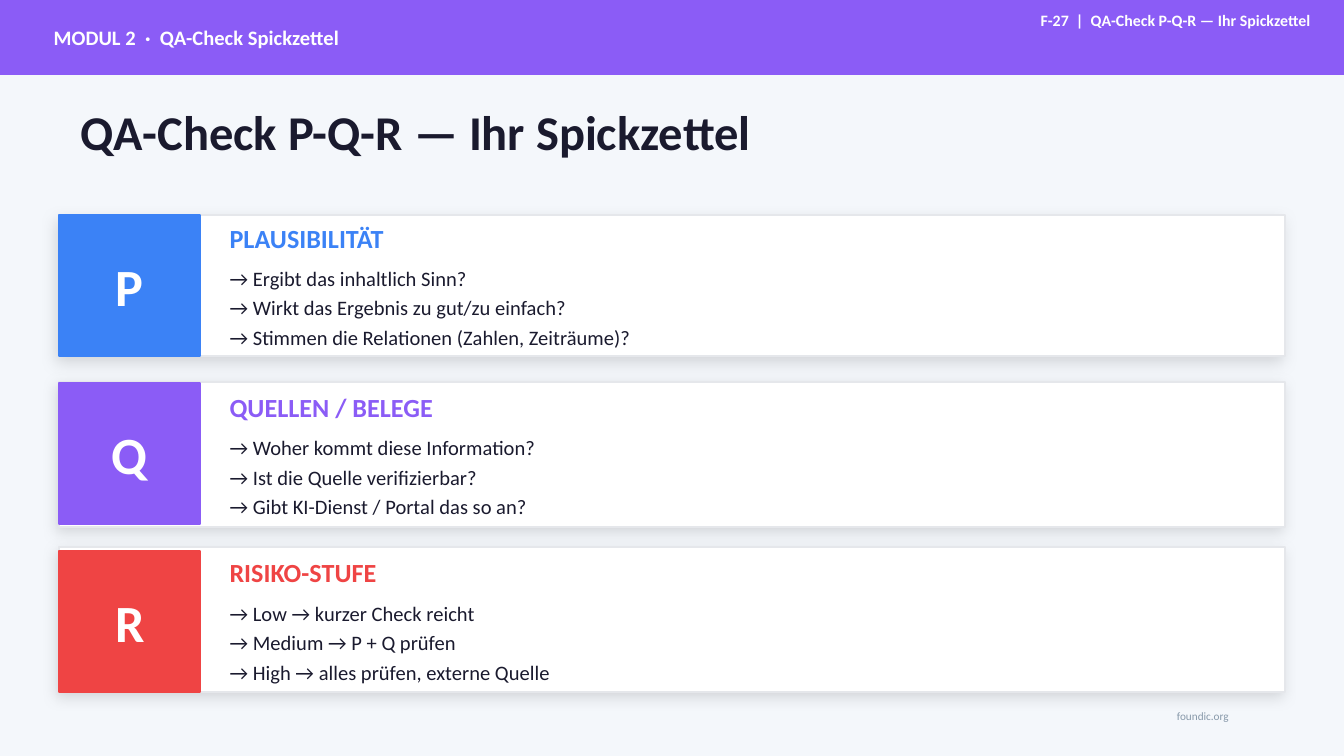
from dataclasses import dataclass
from lxml.etree import SubElement
from pptx import Presentation
from pptx.dml.color import RGBColor
from pptx.enum.shapes import MSO_SHAPE
from pptx.enum.text import MSO_ANCHOR, PP_ALIGN
from pptx.oxml.ns import qn
from pptx.util import Pt


@dataclass(frozen=True)
class Theme:
    font: str = "Calibri"
    back: str = "F4F7FB"
    white: str = "FFFFFF"
    edge: str = "E5E7EB"
    ink: str = "1A1A2E"
    mute: str = "8899AA"
    blue: str = "3B82F6"
    violet: str = "8B5CF6"
    red: str = "EF4444"
    title: float = 26
    letter: float = 28
    head: float = 14
    body: float = 11
    tag: float = 8.5
    foot: float = 6


T = Theme()
WIDE, HIGH = 720, 405
LEFT, TILE = 31.68, 75.6
TEXT = 115.92
STEP = 15.84

# Letter, colour, card top, card height, heading top, heading, questions
ROWS = [
    ("P", T.blue, 115.2, 75.6, 113.76, "PLAUSIBILITÄT",
     ["Ergibt das inhaltlich Sinn?",
      "Wirkt das Ergebnis zu gut/zu einfach?",
      "Stimmen die Relationen (Zahlen, Zeiträume)?"]),
    ("Q", T.violet, 204.48, 77.76, 204.48, "QUELLEN / BELEGE",
     ["Woher kommt diese Information?",
      "Ist die Quelle verifizierbar?",
      "Gibt KI-Dienst / Portal das so an?"]),
    ("R", T.red, 293.04, 77.76, 293.04, "RISIKO-STUFE",
     ["Low → kurzer Check reicht",
      "Medium → P + Q prüfen",
      "High → alles prüfen, externe Quelle"]),
]


def rgb(code):
    return RGBColor.from_string(code)


def add_rect(slide, x, y, w, h, fill, line=None):
    rect = slide.shapes.add_shape(MSO_SHAPE.RECTANGLE,
                                  Pt(x), Pt(y), Pt(w), Pt(h))
    rect.shadow.inherit = False
    rect.fill.solid()
    rect.fill.fore_color.rgb = rgb(fill)
    rect.line.color.rgb = rgb(line or fill)
    rect.line.width = Pt(1)
    return rect


def add_shade(shape):
    """Soft black shadow: 8 pt blur, 3 pt away, 135 degrees, 12 % opaque."""
    effect = shape._element.spPr.find(qn("a:effectLst"))
    outer = SubElement(effect, qn("a:outerShdw"), blurRad=str(Pt(8)),
                       dist=str(Pt(3)), dir=str(135 * 60000),
                       algn="bl", rotWithShape="0")
    color = SubElement(outer, qn("a:srgbClr"), val="000000")
    SubElement(color, qn("a:alpha"), val="12000")


def add_text(slide, x, y, w, h, words, size, color, bold=False,
             align=PP_ALIGN.LEFT, anchor=MSO_ANCHOR.MIDDLE, wrap=True,
             inset=True):
    box = slide.shapes.add_textbox(Pt(x), Pt(y), Pt(w), Pt(h))
    frame = box.text_frame
    frame.word_wrap = wrap
    frame.vertical_anchor = anchor
    if not inset:
        frame.margin_left = frame.margin_right = 0
        frame.margin_top = frame.margin_bottom = 0
    para = frame.paragraphs[0]
    para.alignment = align
    run = para.add_run()
    run.text = words
    run.font.name = T.font
    run.font.size = Pt(size)
    run.font.bold = bold
    run.font.color.rgb = rgb(color)


def add_card(slide, index, row):
    letter, color, top, high, head, name, asks = row
    card = add_rect(slide, LEFT, top, WIDE - 2 * LEFT, high, T.white, T.edge)
    add_shade(card)
    # Letter tile
    tile = 115.2 + index * 90
    add_rect(slide, LEFT, tile, TILE, TILE, color)
    add_text(slide, LEFT, tile, TILE, TILE, letter, T.letter, T.white,
             bold=True, align=PP_ALIGN.CENTER)
    # Heading and questions
    add_text(slide, TEXT, head, 216, 27.36, name, T.head, color, bold=True)
    for i, ask in enumerate(asks):
        add_text(slide, TEXT, head + 27.36 + i * STEP, 400, STEP,
                 "→ " + ask, T.body, T.ink)


def main():
    deck = Presentation()
    deck.slide_width, deck.slide_height = Pt(WIDE), Pt(HIGH)
    slide = deck.slides.add_slide(deck.slide_layouts[6])
    slide.background.fill.solid()
    slide.background.fill.fore_color.rgb = rgb(T.back)

    # Top band
    add_rect(slide, 0, 0, WIDE, 39.6, T.violet)
    add_text(slide, 28.8, 0, 662.4, 39.6, "MODUL 2  ·  QA-Check Spickzettel",
             T.body, T.white, bold=True, inset=False)
    add_text(slide, 363.6, 2.16, 345.6, 34.56,
             "F-27  |  QA-Check P-Q-R — Ihr Spickzettel", T.tag, T.white,
             bold=True, align=PP_ALIGN.RIGHT, anchor=MSO_ANCHOR.TOP,
             wrap=False)

    # Title
    add_text(slide, 36, 46.8, 648, 46.8, "QA-Check P-Q-R — Ihr Spickzettel",
             T.title, T.ink, bold=True)

    # Cards
    for index, row in enumerate(ROWS):
        add_card(slide, index, row)

    # Footer
    add_text(slide, 582.48, 372.24, 82.8, 22.32, "foundic.org", T.foot,
             T.mute, align=PP_ALIGN.RIGHT)
    deck.save("out.pptx")


if __name__ == "__main__":
    main()
